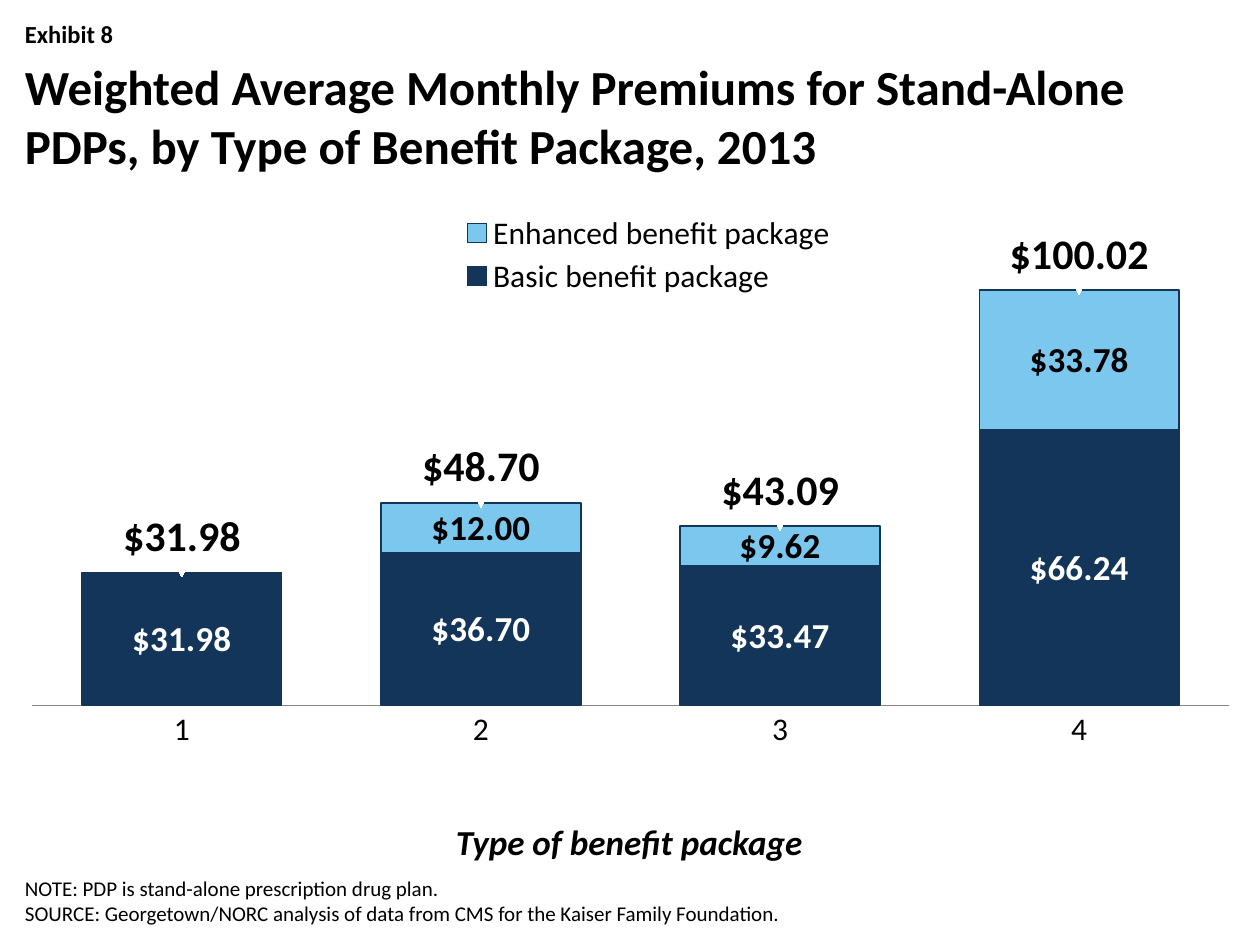
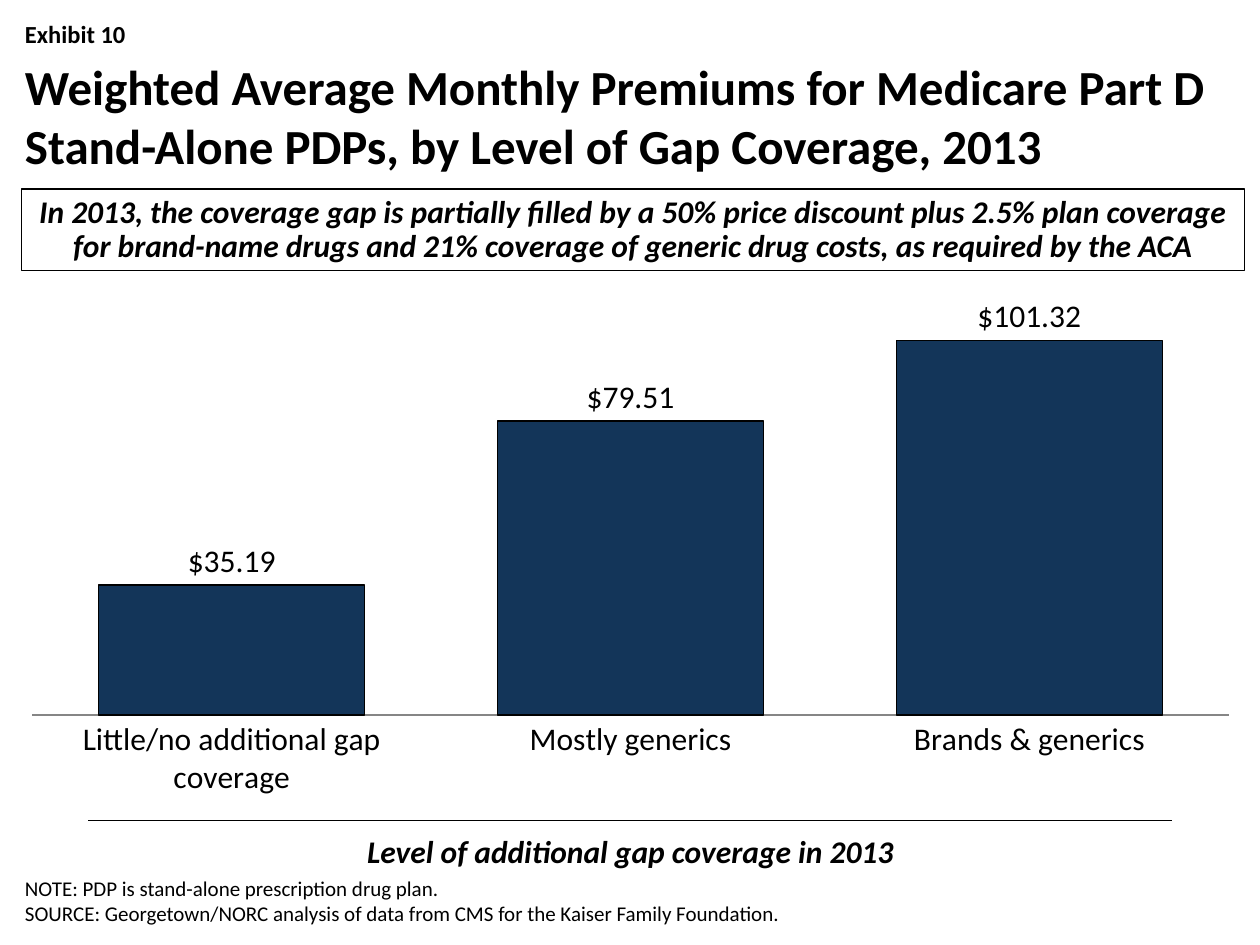
from pptx import Presentation
from pptx.chart.data import CategoryChartData
from pptx.dml.color import RGBColor
from pptx.enum.chart import XL_CHART_TYPE as ChartType, XL_LABEL_POSITION as LabelPosition
from pptx.enum.chart import XL_LEGEND_POSITION as LegendPosition, XL_MARKER_STYLE as MarkerStyle
from pptx.enum.chart import XL_TICK_MARK as TickMark
from pptx.enum.shapes import MSO_CONNECTOR as Connector, MSO_SHAPE as Shape
from pptx.enum.text import MSO_ANCHOR as Anchor, PP_ALIGN as Align
from pptx.oxml import parse_xml
from pptx.oxml.ns import nsdecls, qn
from pptx.util import Inches, Pt
from lxml.etree import SubElement

FONT = "Calibri"
BLACK, WHITE, GREY = "000000", "FFFFFF", "868686"
NAVY, SKY = "133559", "7BC7ED"
DOLLARS = '"$"#,##0.00'
LEFT, WIDTH = 0.1, 9.8
NOTES = [
    "NOTE: PDP is stand-alone prescription drug plan.",
    "SOURCE: Georgetown/NORC analysis of data from CMS for the Kaiser Family Foundation.",
]


def color(value):
    return RGBColor.from_string(value)


def set_line(line, value, width):
    line.color.rgb = color(value)
    line.width = Pt(width)


def set_font(font, size, value=BLACK, bold=False, italic=False):
    font.name = FONT
    font.size = Pt(size)
    font.bold = bold
    font.italic = italic
    font.color.rgb = color(value)


def write_text(frame, text, size, bold=False, italic=False, align=Align.LEFT,
               anchor=Anchor.TOP, spacing=1.0):
    frame.word_wrap = True
    frame.vertical_anchor = anchor
    lines = [text] if isinstance(text, str) else text
    for index, line in enumerate(lines):
        paragraph = frame.add_paragraph() if index else frame.paragraphs[0]
        paragraph.alignment = align
        paragraph.line_spacing = spacing
        run = paragraph.add_run()
        run.text = line
        set_font(run.font, size, bold=bold, italic=italic)


def add_text(slide, box, text, size, **format):
    shape = slide.shapes.add_textbox(*map(Inches, box))
    write_text(shape.text_frame, text, size, **format)


def add_frame(slide, exhibit, title):
    add_text(slide, (LEFT, 0.1, WIDTH, 0.34), exhibit, 14, bold=True)
    add_text(slide, (LEFT, 0.4, WIDTH, 1), title, 28, bold=True)
    add_text(slide, (LEFT, 6.8, 9.1, 0.6), NOTES, 12, anchor=Anchor.BOTTOM)


def add_axis_caption(slide, box, text, size):
    add_text(slide, box, text, size, bold=True, italic=True, align=Align.CENTER, spacing=0.9)


def add_callout(slide, box, text):
    shape = slide.shapes.add_shape(Shape.RECTANGLE, *map(Inches, box))
    shape.shadow.inherit = False
    shape.fill.background()
    set_line(shape.line, BLACK, 0.75)
    frame = shape.text_frame
    frame.margin_left = frame.margin_right = Inches(0.05)
    write_text(frame, text, 18, bold=True, italic=True, align=Align.CENTER,
               anchor=Anchor.MIDDLE, spacing=0.9)


def add_rule(slide, left, right, top):
    rule = slide.shapes.add_connector(
        Connector.STRAIGHT, Inches(left), Inches(top), Inches(right), Inches(top))
    set_line(rule.line, BLACK, 0.75)
    SubElement(rule.element.spPr, qn("a:effectLst"))


def layout_xml(box, target=""):
    parts = "".join(f'<c:{name}Mode val="edge"/>' for name in "xy")
    parts += "".join(f'<c:{name} val="{value}"/>' for name, value in zip("xywh", box))
    return parse_xml(f'<c:layout {nsdecls("c")}><c:manualLayout>{target}{parts}'
                     '</c:manualLayout></c:layout>')


def drop_layout(element):
    for layout in element.findall(qn("c:layout")):
        element.remove(layout)


def place_plot(chart, box):
    area = chart.element.xpath(".//c:plotArea")[0]
    drop_layout(area)
    area.insert(0, layout_xml(box, '<c:layoutTarget val="inner"/>'))


def add_columns(slide, box, plot_box, chart_type, categories, series):
    data = CategoryChartData(number_format=DOLLARS)
    data.categories = categories
    for name, values in series:
        data.add_series(name, values)
    chart = slide.shapes.add_chart(chart_type, *map(Inches, box), data).chart
    chart.has_title = False
    chart.has_legend = False
    set_font(chart.font, 18)
    place_plot(chart, plot_box)
    plot = chart.plots[0]
    plot.gap_width = 50
    plot.vary_by_categories = False
    category_axis, value_axis = chart.category_axis, chart.value_axis
    category_axis.major_tick_mark = category_axis.minor_tick_mark = TickMark.NONE
    set_line(category_axis.format.line, GREY, 0.75)
    value_axis.minimum_scale, value_axis.maximum_scale = 0, 120
    value_axis.has_major_gridlines = False
    value_axis.visible = False
    return chart


def paint_columns(series, fill, line, width):
    series.format.fill.solid()
    series.format.fill.fore_color.rgb = color(fill)
    set_line(series.format.line, line, width)
    series.invert_if_negative = False


def show_values(series, position, size, **format):
    labels = series.data_labels
    labels.show_value = True
    labels.position = position
    labels.number_format = DOLLARS
    labels.number_format_is_linked = False
    set_font(labels.font, size, **format)


def move_totals_to_line(chart):
    bars = chart.element.xpath(".//c:barChart")[0]
    totals = bars.findall(qn("c:ser"))[-1]
    for flag in totals.findall(qn("c:invertIfNegative")):
        totals.remove(flag)
    axes = "".join(f'<c:axId val="{axis.get("val")}"/>' for axis in bars.findall(qn("c:axId")))
    line = parse_xml(f'<c:lineChart {nsdecls("c")}><c:grouping val="standard"/>'
                     f'<c:varyColors val="0"/><c:marker val="1"/>{axes}</c:lineChart>')
    line.insert(2, totals)
    bars.addnext(line)
    series = chart.plots[1].series[0]
    series.smooth = False
    series.format.line.fill.background()
    series.marker.style = MarkerStyle.AUTOMATIC
    series.marker.size = 5
    series.marker.format.fill.background()
    series.marker.format.line.fill.background()
    return series


def add_legend(chart, box, hidden):
    chart.has_legend = True
    chart.legend.position = LegendPosition.RIGHT
    chart.legend.include_in_layout = False
    set_font(chart.legend.font, 18)
    legend = chart.element.xpath(".//c:legend")[0]
    drop_layout(legend)
    entry = parse_xml(f'<c:legendEntry {nsdecls("c")}><c:idx val="{hidden}"/>'
                      '<c:delete val="1"/></c:legendEntry>')
    position = legend.find(qn("c:legendPos"))
    position.addnext(entry)
    entry.addnext(layout_xml(box))


def add_package_chart(slide, box):
    basic = (31.98, 36.7, 33.47, 66.24)
    enhanced = (None, 12, 9.62, 33.78)
    totals = [round(low + (high or 0), 2) for low, high in zip(basic, enhanced)]
    totals[-1] = 100.02
    chart = add_columns(
        slide, box, (0.016, 0.028, 0.969, 0.76), ChartType.COLUMN_STACKED, list("1234"),
        [("Basic benefit package", basic), ("Enhanced benefit package", enhanced),
         ("Series 3", totals)])
    total_series = move_totals_to_line(chart)
    chart.plots[0].overlap = 100
    for series, fill, text in zip(chart.plots[0].series, (NAVY, SKY), (WHITE, BLACK)):
        paint_columns(series, fill, NAVY, 1)
        show_values(series, LabelPosition.CENTER, 20, value=text, bold=True)
    show_values(total_series, LabelPosition.ABOVE, 24, bold=True)
    add_legend(chart, (0.34, 0.03, 0.35, 0.14), hidden=2)


def add_gap_chart(slide, box):
    chart = add_columns(
        slide, box, (0.016, 0.033, 0.969, 0.749), ChartType.COLUMN_CLUSTERED,
        ["Little/no additional gap coverage", "Mostly generics", "Brands & generics"],
        [("Series 1", (35.19, 79.51, 101.32))])
    series = chart.plots[0].series[0]
    paint_columns(series, NAVY, BLACK, 0.75)
    show_values(series, LabelPosition.OUTSIDE_END, 18)


def build_package_slide(slide):
    add_axis_caption(slide, (0.91, 6.5, 8.17, 0.4), "Type of benefit package", 20)
    add_package_chart(slide, (LEFT, 1.5, WIDTH, 5.2))
    add_frame(slide, "Exhibit 8",
              "Weighted Average Monthly Premiums for Stand-Alone PDPs, "
              "by Type of Benefit Package, 2013")


def build_gap_slide(slide):
    add_rule(slide, 0.7, 9.3, 6.51)
    add_callout(slide, (0.17, 1.5, 9.71, 0.65),
                "In 2013, the coverage gap is partially filled by a 50% price discount plus "
                "2.5% plan coverage for brand-name drugs and 21% coverage of generic drug "
                "costs, as required by the ACA")
    add_axis_caption(slide, (0.92, 6.59, 8.17, 0.37),
                     "Level of additional gap coverage in 2013", 18)
    add_gap_chart(slide, (LEFT, 2, WIDTH, 4.7))
    add_frame(slide, "Exhibit 10",
              "Weighted Average Monthly Premiums for Medicare Part D Stand-Alone PDPs, "
              "by Level of Gap Coverage, 2013")


def main():
    presentation = Presentation()
    presentation.slide_width, presentation.slide_height = Inches(10), Inches(7.5)
    for build in (build_package_slide, build_gap_slide):
        build(presentation.slides.add_slide(presentation.slide_layouts[6]))
    presentation.save("out.pptx")


if __name__ == "__main__":
    main()
